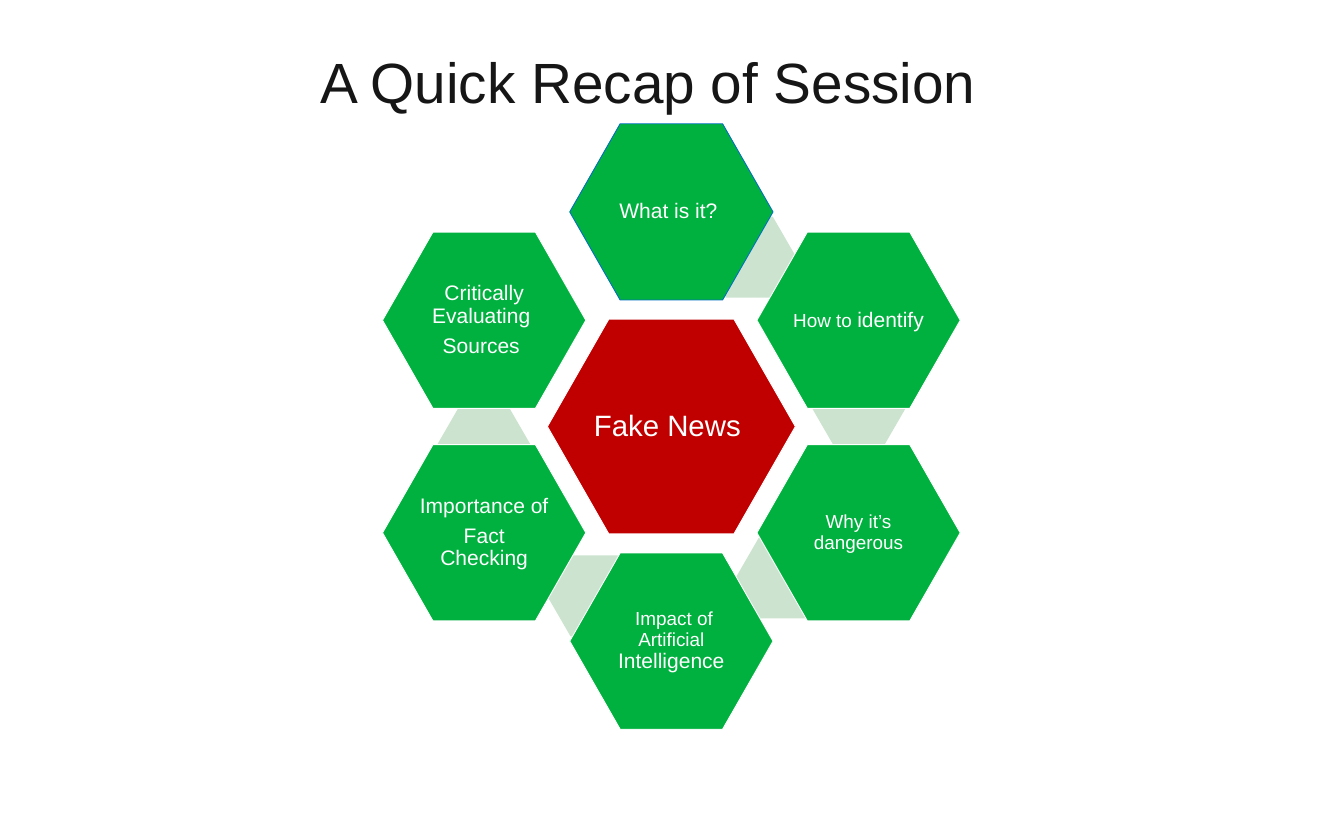
"""Build the recap slide: a ring of six topics around Fake News."""
from pptx import Presentation
from pptx.dml.color import RGBColor
from pptx.enum.shapes import MSO_SHAPE
from pptx.enum.text import MSO_ANCHOR, PP_ALIGN
from pptx.util import Cm, Pt

HEXAGON = MSO_SHAPE.HEXAGON
MIDDLE, TOP = MSO_ANCHOR.MIDDLE, MSO_ANCHOR.TOP
CENTER = PP_ALIGN.CENTER

COLORS = {
    "title": "171616", "text": "FFFFFF", "core": "C00000", "topic": "00B140",
    "link": "CCE4CF", "edge": "FFFFFF", "first_edge": "0070C0",
}
FONT = "Arial"

TITLE = [[("A Quick Recap of Session", 54)]]
CORE = [[("Fake News ", 28)]]
TOPICS = [
    [[("What is it? ", 20)]],
    [[("How to ", 18), ("identify", 20)]],
    [[("Why it’s dangerous", 18)]],
    [[(" Impact of Artificial ", 18), ("Intelligence", 20)]],
    [[("Importance of ", 20)], [("Fact Checking", 20)]],
    [[("Critically Evaluating ", 20)], [("Sources ", 20)]],
]

SLIDE_SIZE = (45.16, 28.22)
TITLE_BOX = (10.41, 1.45, 22.73, 2.57)
RING_CENTER = (22.56, 14.33)
CORE_SIZE, TOPIC_SIZE, LINK_SIZE = (8.33, 7.21), (6.83, 5.92), (3.15, 2.72)
SIDE_X, SIDE_Y, POLE_Y = 6.29, 3.57, 7.21
TOPIC_OFFSETS = [
    (0, -POLE_Y), (SIDE_X, -SIDE_Y), (SIDE_X, SIDE_Y),
    (0, POLE_Y), (-SIDE_X, SIDE_Y), (-SIDE_X, -SIDE_Y),
]
LINK_OFFSETS = [(2.62, -5.69), (6.3, -0.62), (3.73, 5.09), (-2.6, 5.69), (-6.3, 0.62)]


def rgb(name):
    return RGBColor.from_string(COLORS[name])


def write(frame, paragraphs, color="text", anchor=MIDDLE, wrap=True,
          inset=None, line_spacing=None, space_after=0):
    frame.word_wrap = wrap
    frame.vertical_anchor = anchor
    if inset is not None:
        frame.margin_left = frame.margin_right = Cm(inset)
        frame.margin_top = frame.margin_bottom = Cm(inset)
    for index, runs in enumerate(paragraphs):
        paragraph = frame.add_paragraph() if index else frame.paragraphs[0]
        paragraph.alignment = CENTER
        paragraph.line_spacing = line_spacing
        paragraph.space_after = Pt(round(runs[0][1] * space_after))
        for text, size in runs:
            run = paragraph.add_run()
            run.text = text
            run.font.name = FONT
            run.font.size = Pt(size)
            run.font.color.rgb = rgb(color)


def add_hexagon(slide, size, fill, offset=(0, 0), edge=None, adjust=0.286,
                paragraphs=None, inset=0.08):
    left, top = (c + o - s / 2 for c, o, s in zip(RING_CENTER, offset, size))
    hexagon = slide.shapes.add_shape(HEXAGON, Cm(left), Cm(top), *map(Cm, size))
    hexagon.shadow.inherit = False
    hexagon.adjustments[0] = adjust
    hexagon.fill.solid()
    hexagon.fill.fore_color.rgb = rgb(fill)
    if edge:
        hexagon.line.color.rgb = rgb(edge)
        hexagon.line.width = Pt(0.85)
    else:
        hexagon.line.fill.background()
    if paragraphs:
        write(hexagon.text_frame, paragraphs, inset=inset,
              line_spacing=0.9, space_after=0.35)


def main():
    deck = Presentation()
    deck.slide_width, deck.slide_height = map(Cm, SLIDE_SIZE)
    slide = deck.slides.add_slide(deck.slide_layouts[6])

    add_hexagon(slide, CORE_SIZE, "core", edge="edge", paragraphs=CORE, inset=0.1)
    for offset in LINK_OFFSETS:
        add_hexagon(slide, LINK_SIZE, "link", offset, adjust=0.289)
    for index, (topic, offset) in enumerate(zip(TOPICS, TOPIC_OFFSETS)):
        edge = "edge" if index else "first_edge"
        add_hexagon(slide, TOPIC_SIZE, "topic", offset, edge, paragraphs=topic)

    title = slide.shapes.add_textbox(*map(Cm, TITLE_BOX))
    write(title.text_frame, TITLE, color="title", anchor=TOP, wrap=False)
    deck.save("out.pptx")


if __name__ == "__main__":
    main()
